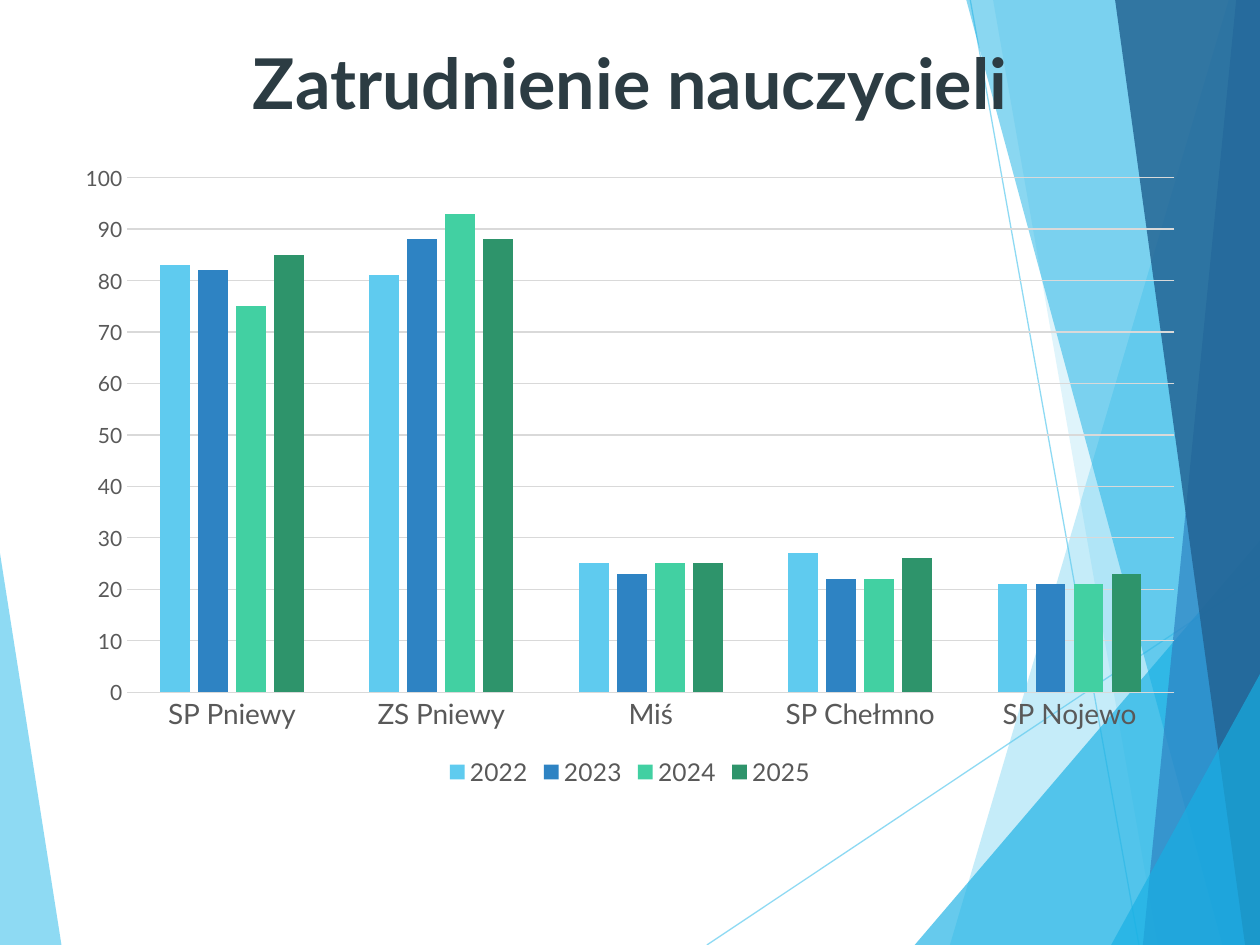
from dataclasses import dataclass

from lxml import etree
from pptx import Presentation
from pptx import util as u
from pptx.chart import data as cd
from pptx.dml.color import RGBColor
from pptx.enum import chart as ch
from pptx.enum import shapes, text
from pptx.oxml import ns

WIDE, HIGH = 25.4, 19.05


@dataclass(frozen=True)
class Theme:
    font: str = "Lato"
    sky: str = "5FCBEF"
    cyan: str = "17B0E4"
    blue: str = "2E83C3"
    navy: str = "226292"
    mint: str = "42D0A2"
    green: str = "2E946B"
    ink: str = "2C3C43"
    gray: str = "595959"
    rule: str = "D9D9D9"
    thin: float = 0.75
    head: int = 40
    cat: int = 16
    key: int = 14
    tick: int = 12


def put(item, **vals):
    for name, val in vals.items():
        setattr(item, name, val)


def fade(item, pct):
    """Set the opacity of every colour in a shape."""
    for clr in item.element.spPr.iter(ns.qn("a:srgbClr")):
        etree.SubElement(clr, ns.qn("a:alpha"), val=str(pct * 1000))


class Deck:
    def __init__(self, theme):
        self.theme = theme
        self.prs = Presentation()
        put(self.prs, slide_width=u.Cm(WIDE), slide_height=u.Cm(HIGH))
        self.slide = self.prs.slides.add_slide(self.prs.slide_layouts[6])
        self.items = self.slide.shapes

    def type(self, font, size, color, bold=False):
        put(font, name=self.theme.font, size=u.Pt(size), bold=bold)
        font.color.rgb = RGBColor.from_string(color)

    def stroke(self, line, color):
        line.width = u.Pt(self.theme.thin)
        line.color.rgb = RGBColor.from_string(color)

    def shard(self, points, color, pct):
        first, *rest = [(u.Cm(x), u.Cm(y)) for x, y in points]
        pen = self.items.build_freeform(*first, scale=1.0)
        pen.add_line_segments(rest, close=True)
        item = pen.convert_to_shape()
        item.shadow.inherit = False
        item.fill.solid()
        item.fill.fore_color.rgb = RGBColor.from_string(color)
        item.line.fill.background()
        fade(item, pct)

    def band(self, top, base, color, pct):
        """Fill from a slanted left edge to the right side of the slide."""
        self.shard([(top, 0), (base, HIGH), (WIDE, HIGH), (WIDE, 0)], color, pct)

    def wedge(self, left, top, color, pct):
        """Fill the lower right corner with a triangle."""
        self.shard([(left, HIGH), (WIDE, top), (WIDE, HIGH)], color, pct)

    def line(self, ends, color, pct):
        item = self.items.add_connector(
            shapes.MSO_CONNECTOR.STRAIGHT, *map(u.Cm, ends))
        self.stroke(item.line, color)
        fade(item, pct)
        etree.SubElement(item.element.spPr, ns.qn("a:effectLst"))

    def title(self, words, *place):
        frame = self.items.add_textbox(*map(u.Cm, place)).text_frame
        put(frame, word_wrap=True, vertical_anchor=text.MSO_ANCHOR.MIDDLE)
        para = frame.paragraphs[0]
        para.alignment = text.PP_ALIGN.CENTER
        run = para.add_run()
        run.text = words
        self.type(run.font, self.theme.head, self.theme.ink, True)

    def chart(self, cats, rows, colors, *place):
        t = self.theme
        data = cd.CategoryChartData()
        data.categories = cats
        for name, vals in rows.items():
            data.add_series(name, vals)
        chart = self.items.add_chart(
            ch.XL_CHART_TYPE.COLUMN_CLUSTERED, *map(u.Cm, place), data).chart
        put(chart, has_title=False, has_legend=True)
        put(chart.legend, position=ch.XL_LEGEND_POSITION.BOTTOM,
            include_in_layout=False)
        self.type(chart.legend.font, t.key, t.gray)
        plot = chart.plots[0]
        put(plot, gap_width=219, overlap=-27, vary_by_categories=False)
        for row, color in zip(plot.series, colors):
            row.format.fill.solid()
            row.format.fill.fore_color.rgb = RGBColor.from_string(color)
        none = ch.XL_TICK_MARK.NONE
        for axis, size in ((chart.category_axis, t.cat), (chart.value_axis, t.tick)):
            put(axis, major_tick_mark=none, minor_tick_mark=none)
            self.type(axis.tick_labels.font, size, t.gray)
        self.stroke(chart.category_axis.format.line, t.rule)
        axis = chart.value_axis
        put(axis, minimum_scale=0, maximum_scale=100, major_unit=10)
        axis.format.line.fill.background()
        self.stroke(axis.major_gridlines.format.line, t.rule)


def main():
    t = Theme()
    deck = Deck(t)

    deck.shard([(0, 11.15), (1.24, HIGH), (0, HIGH)], t.sky, 70)
    for ends in ((14.25, HIGH, WIDE, 11.61), (19.56, 0, 22.96, HIGH)):
        deck.line(ends, t.sky, 70)
    deck.band(24.77, 19.15, t.sky, 36)
    deck.band(20.02, 23.34, t.sky, 20)
    deck.wedge(18.44, 10.9, t.cyan, 66)
    deck.band(19.48, 24.64, t.cyan, 50)
    deck.band(24.92, 23.04, t.blue, 70)
    deck.band(22.48, 25.1, t.navy, 82)
    deck.wedge(22.4, 13.59, t.cyan, 66)

    cats = ["SP Pniewy", "ZS Pniewy", "Miś", "SP Chełmno", "SP Nojewo"]
    rows = {
        "2022": (83, 81, 25, 27, 21),
        "2023": (82, 88, 23, 22, 21),
        "2024": (75, 93, 25, 22, 21),
        "2025": (85, 88, 25, 26, 23),
    }
    deck.chart(cats, rows, (t.sky, t.blue, t.mint, t.green),
               1.27, 3.07, 22.86, 12.9)
    deck.title("Zatrudnienie nauczycieli", 3.89, 0.56, 17.63, 2.16)
    deck.prs.save("out.pptx")


if __name__ == "__main__":
    main()
